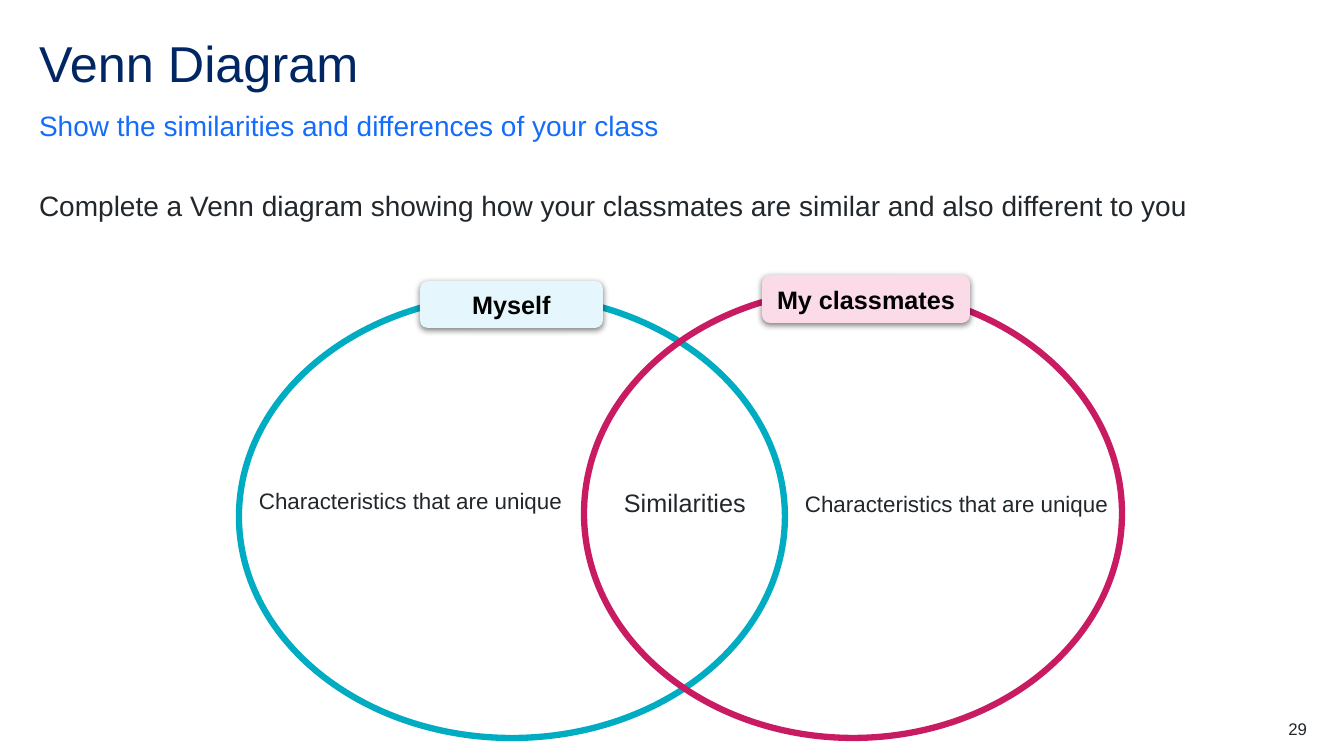
"""Build a Venn diagram slide comparing myself with my classmates."""
from lxml import etree
from pptx import Presentation
from pptx.dml.color import RGBColor
from pptx.enum.shapes import MSO_SHAPE as Shape
from pptx.enum.text import MSO_ANCHOR as Anchor, PP_ALIGN as Align
from pptx.oxml.ns import qn
from pptx.util import Emu, Pt

INK = "22272B"
TEXTS = [
    ("Venn Diagram", (39, 39, 1266, 60), 36, "002664", {"spacing": 0.9}),
    ("Show the similarities and differences of your class", (39, 108, 1266, 34), 20, "146CFD",
     {"spacing": 1.5, "after": 12, "anchor": Anchor.BOTTOM}),
    ("Complete a Venn diagram showing how your classmates are similar and also different to you",
     (39, 172, 1266, 67), 20, INK, {"spacing": 1.5, "after": 12}),
    ("Characteristics that are unique", (259, 487, 308, 27), 16, INK, {}),
    ("Characteristics that are unique", (805, 490, 317, 27), 16, INK, {}),
    ("Similarities", (624, 487, 145, 30), 18, INK, {}),
    ("29", (1227, 719, 80, 20), 12, INK, {"align": Align.RIGHT}),
]
SETS = [
    ("Myself", (239, 295, 546, 443), "00ACC2", (420, 281, 183, 47), "E5F7FC"),
    ("My classmates", (584, 289, 538, 449), "C81B62", (762, 275, 208, 48), "FBDBE7"),
]


def px(length):
    return Emu(round(length * 914400 / 100.8))


def color(hex_code):
    return RGBColor.from_string(hex_code)


def write(shape, text, size, hex_code, align=Align.LEFT, anchor=Anchor.TOP,
          margins=(0, 0), bold=False, spacing=None, after=0):
    frame = shape.text_frame
    frame.word_wrap = True
    frame.vertical_anchor = anchor
    frame.margin_left = frame.margin_right = px(margins[0])
    frame.margin_top = frame.margin_bottom = px(margins[1])
    para = frame.paragraphs[0]
    para.text = text
    para.alignment = align
    para.space_after = Pt(after)
    if spacing:
        para.line_spacing = spacing
    para.font.name = "Arial"
    para.font.size = Pt(size)
    para.font.bold = bold
    para.font.color.rgb = color(hex_code)


def add_shadow(shape):
    effects = etree.SubElement(shape._element.spPr, qn("a:effectLst"))
    shadow = etree.SubElement(effects, qn("a:outerShdw"), blurRad=str(Pt(4.5)),
                              dist=str(Pt(1.5)), dir="5400000", algn="t", rotWithShape="0")
    black = etree.SubElement(shadow, qn("a:srgbClr"), val="000000")
    etree.SubElement(black, qn("a:alpha"), val="50000")


def add_set(page, name, circle_box, line_color, label_box, fill_color):
    group = page.shapes.add_group_shape()
    circle = group.shapes.add_shape(Shape.OVAL, *map(px, circle_box))
    circle.shadow.inherit = False
    circle.fill.background()
    circle.line.color.rgb = color(line_color)
    circle.line.width = Pt(4.5)
    label = group.shapes.add_shape(Shape.ROUNDED_RECTANGLE, *map(px, label_box))
    label.fill.solid()
    label.fill.fore_color.rgb = color(fill_color)
    label.line.fill.background()
    add_shadow(label)
    write(label, name, 18, "000000", Align.CENTER, Anchor.MIDDLE, (9, 4), bold=True)


def main():
    deck = Presentation()
    deck.slide_width, deck.slide_height = px(1344), px(756)
    page = deck.slides.add_slide(deck.slide_layouts[6])
    for venn_set in SETS:
        add_set(page, *venn_set)
    for text, box, size, hex_code, options in TEXTS:
        write(page.shapes.add_textbox(*map(px, box)), text, size, hex_code, **options)
    deck.save("out.pptx")


if __name__ == "__main__":
    main()
